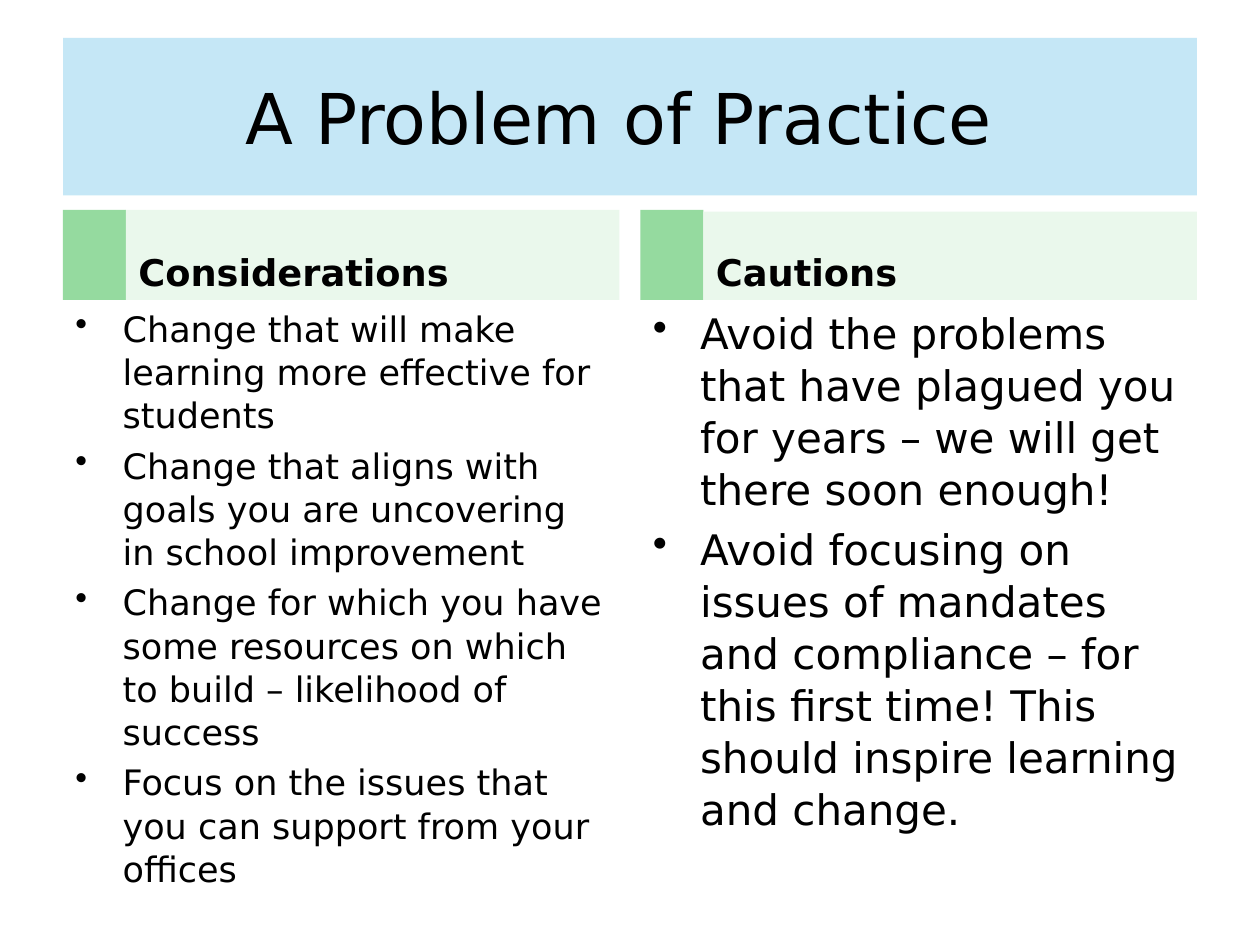
from lxml import etree
from pptx import Presentation
from pptx.dml.color import RGBColor
from pptx.enum.shapes import MSO_SHAPE
from pptx.enum.text import MSO_ANCHOR, PP_ALIGN
from pptx.oxml.ns import qn
from pptx.util import Pt

RECTANGLE = MSO_SHAPE.RECTANGLE
MIDDLE, BOTTOM = MSO_ANCHOR.MIDDLE, MSO_ANCHOR.BOTTOM
LEFT, CENTER = PP_ALIGN.LEFT, PP_ALIGN.CENTER

FONT = "DejaVu Sans"
TITLE_BOX = (36, 21.6, 648, 90)
COLUMN_WIDTH, HEADER_BOTTOM, TAB_WIDTH = 318, 171.4, 36
TAB_TOP = 120
INDENT = 27
COLUMNS = [
    {"left": 36, "header_top": 120, "heading": "Considerations",
     "size": 20, "height": 338.4, "points": [
         "Change that will make learning more effective for students",
         "Change that aligns with goals you are uncovering in school improvement",
         "Change for which you have some resources on which to build – likelihood of success",
         "Focus on the issues that you can support from your offices"]},
    {"left": 366, "header_top": 121, "heading": "Cautions",
     "size": 24, "height": 311, "points": [
         "Avoid the problems that have plagued you for years – we will get there soon enough!",
         "Avoid focusing on issues of mandates and compliance – for this first time! "
         "This should inspire learning and change."]},
]


def color(value):
    return RGBColor.from_string(value)


def set_values(target, values):
    for name, value in values.items():
        setattr(target, name, value)


def format_font(font, size, bold=False):
    set_values(font, {"name": FONT, "size": Pt(size), "bold": bold})
    font.color.rgb = color("000000")


def add_rectangle(page, box, fill):
    shape = page.shapes.add_shape(RECTANGLE, *map(Pt, box))
    shape.shadow.inherit = False
    shape.fill.solid()
    shape.fill.fore_color.rgb = color(fill)
    shape.line.fill.background()
    return shape


def add_bullet(para):
    """Give the paragraph a round bullet with a hanging indent."""
    properties = para._p.get_or_add_pPr()
    properties.set("marL", str(Pt(INDENT)))
    properties.set("indent", str(-Pt(INDENT)))
    etree.SubElement(properties, qn("a:buChar")).set("char", "•")


def place_title(page, box, text):
    title = page.shapes.title
    set_values(title, dict(zip(("left", "top", "width", "height"), map(Pt, box))))
    title.fill.solid()
    title.fill.fore_color.rgb = color("AADDF3")
    tint = title.fill._xPr.find(".//" + qn("a:srgbClr"))
    etree.SubElement(tint, qn("a:alpha")).set("val", "68000")
    frame = title.text_frame
    set_values(frame, {"text": text, "vertical_anchor": MIDDLE, "word_wrap": True})
    para = frame.paragraphs[0]
    para.alignment = CENTER
    format_font(para.font, 40)


def add_header(page, box, tab_top, heading):
    left, top, width, height = box
    add_rectangle(page, (left, tab_top, TAB_WIDTH, top + height - tab_top), "95DA9F")
    band = add_rectangle(page, (left + TAB_WIDTH, top, width - TAB_WIDTH, height), "EAF8EC")
    frame = band.text_frame
    set_values(frame, {"text": heading, "vertical_anchor": BOTTOM, "word_wrap": True})
    para = frame.paragraphs[0]
    para.alignment = LEFT
    format_font(para.font, 21, bold=True)


def add_points(page, box, points, size):
    frame = page.shapes.add_textbox(*map(Pt, box)).text_frame
    frame.word_wrap = True
    for index, point in enumerate(points):
        para = frame.add_paragraph() if index else frame.paragraphs[0]
        para.text = point
        add_bullet(para)
        para.line_spacing = 1.03
        para.space_before = Pt(size * 0.2 if index else 0)
        format_font(para.font, size)


def build_slide(deck):
    page = deck.slides.add_slide(deck.slide_layouts[5])
    # The trailing space shifts the centred title slightly left.
    place_title(page, TITLE_BOX, "A Problem of Practice ")
    for column in COLUMNS:
        left, top = column["left"], column["header_top"]
        add_header(page, (left, top, COLUMN_WIDTH, HEADER_BOTTOM - top),
                   TAB_TOP, column["heading"])
        add_points(page, (left, HEADER_BOTTOM, COLUMN_WIDTH, column["height"]),
                   column["points"], column["size"])


def main():
    deck = Presentation()
    set_values(deck, {"slide_width": Pt(720), "slide_height": Pt(540)})
    build_slide(deck)
    deck.save("out.pptx")


if __name__ == "__main__":
    main()
